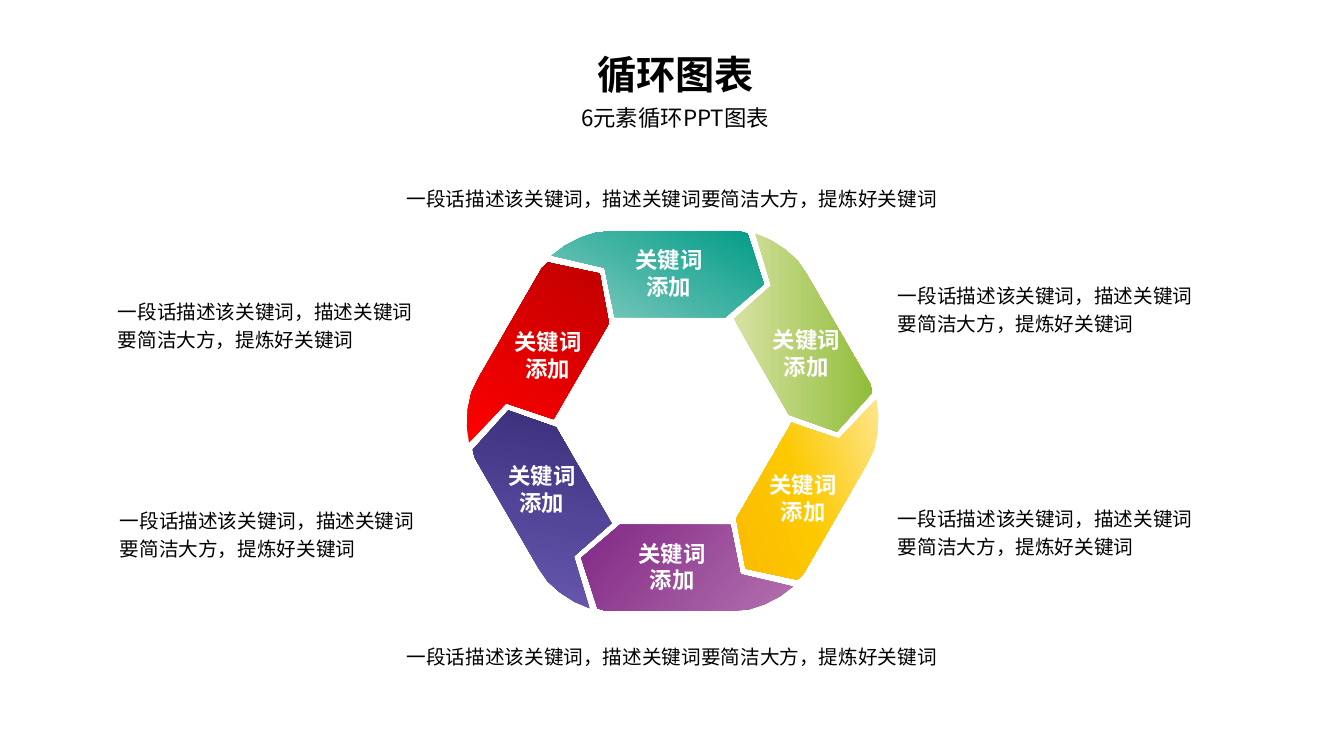
import math

import lxml.etree
import pptx
import pptx.dml.color
import pptx.enum.text
import pptx.oxml.ns
import pptx.util

Cm = pptx.util.Cm
RGB = pptx.dml.color.RGBColor
Align = pptx.enum.text.PP_ALIGN
qn = pptx.oxml.ns.qn

FONT = "Noto Sans CJK SC"
BLACK = RGB(0x00, 0x00, 0x00)
WHITE = RGB(0xFF, 0xFF, 0xFF)
TEAL = (RGB(0x86, 0xCC, 0xC1), RGB(0x3E, 0xB2, 0xA2), RGB(0x00, 0x9C, 0x87))
GREEN = (RGB(0xD7, 0xE2, 0xA3), RGB(0xB0, 0xCE, 0x69), RGB(0x90, 0xBD, 0x39))
YELLOW = (RGB(0xFD, 0xE6, 0x8D), RGB(0xFC, 0xC9, 0x00), RGB(0xFB, 0xBB, 0x01))
PURPLE = (RGB(0xB3, 0x70, 0xAE), RGB(0x82, 0x29, 0x85))
BLUE = (RGB(0x69, 0x5A, 0xB2), RGB(0x53, 0x45, 0x97), RGB(0x3A, 0x2E, 0x7A))
RED = (RGB(0xFF, 0x00, 0x00), RGB(0xC0, 0x00, 0x00))

TITLE = {"size": pptx.util.Pt(28), "bold": True}
SUBTITLE = {"size": pptx.util.Pt(16)}
KEYWORD = {"size": pptx.util.Pt(16), "bold": True}
BODY = {"size": pptx.util.Pt(14)}

DESCRIPTION = "一段话描述该关键词，描述关键词要简洁大方，提炼好关键词"

# Corners of the top arrow in cm from the ring centre
ARROW = [
    (-3.04, -4.17), (-2.71, -4.42), (-2.32, -4.62), (-1.92, -4.75),
    (-1.51, -4.78), (1.46, -4.78), (1.69, -4.78), (1.89, -4.72),
    (2.30, -3.45), (1.33, -2.62), (-1.46, -2.62), (-1.71, -3.86),
]
SEGMENTS = [
    (TEAL, (0, 54, 100), 300, (-0.09, -3.71)),
    (GREEN, (0, 54, 100), 0, (3.37, -1.70)),
    (YELLOW, (0, 54, 100), 160, (3.29, 1.96)),
    (PURPLE, (0, 100), 220, (-0.01, 3.68)),
    (BLUE, (0, 47, 100), 280, (-3.29, 1.73)),
    (RED, (0, 100), 300, (-3.14, -1.65)),
]


def add_text(page, box, lines, style, color=BLACK, align=Align.LEFT, wrap=True, spacing=1.0):
    """Place a text box with one paragraph per line."""
    frame = page.shapes.add_textbox(*(Cm(length) for length in box)).text_frame
    frame.word_wrap = wrap
    frame.auto_size = pptx.enum.text.MSO_AUTO_SIZE.SHAPE_TO_FIT_TEXT
    for index, line in enumerate(lines):
        para = frame.add_paragraph() if index else frame.paragraphs[0]
        para.alignment, para.line_spacing = align, spacing
        span = para.add_run()
        span.text = line
        span.font.color.rgb = color
        for name, value in {"name": FONT, **style}.items():
            setattr(span.font, name, value)
        properties = span.font.color and span._r.get_or_add_rPr()
        lxml.etree.SubElement(properties, qn("a:ea")).set("typeface", FONT)


def fill_gradient(shape, colors, stops, angle):
    """Fill a shape with a linear gradient, its angle measured clockwise."""
    shape.fill.gradient()
    shape.fill.gradient_angle = (360 - angle) % 360
    stop_list = shape.element.spPr.find(".//" + qn("a:gsLst"))
    for stop in list(stop_list):
        stop_list.remove(stop)
    for color, position in zip(colors, stops):
        stop = lxml.etree.SubElement(stop_list, qn("a:gs"), pos=str(position * 1000))
        lxml.etree.SubElement(stop, qn("a:srgbClr"), val=str(color))


def add_heading(page, box):
    """Place the title and the subtitle below it."""
    left, top, width, height = box
    add_text(page, (left + 0.4, top, 4.5, 1.45), ["循环图表"], TITLE, wrap=False)
    add_text(page, (left, top + 1.37, width, height - 1.37), ["6元素循环PPT图表"], SUBTITLE)


def add_ring(page, box):
    """Place six arrows turned in steps of 60 degrees, with their keywords."""
    left, top, width, height = box
    center_x, center_y = left + width / 2, top + height / 2
    for index, (colors, stops, angle, _) in enumerate(SEGMENTS):
        turn = math.radians(60 * index)
        cos, sin = math.cos(turn), math.sin(turn)
        corners = [
            (Cm(center_x + x * cos - y * sin), Cm(center_y + x * sin + y * cos))
            for x, y in ARROW
        ]
        builder = page.shapes.build_freeform(*corners[0])
        builder.add_line_segments(corners[1:], close=True)
        arrow = builder.convert_to_shape()
        arrow.shadow.inherit = False
        arrow.line.fill.background()
        fill_gradient(arrow, colors, stops, angle)
    label_width, label_height = 2.24, 1.63
    for *_, (x, y) in SEGMENTS:
        label = (center_x + x - label_width / 2, center_y + y - label_height / 2,
                 label_width, label_height)
        add_text(page, label, ["关键词", "添加"], KEYWORD, WHITE, Align.CENTER, wrap=False)


def add_descriptions(page, box):
    """Place the side descriptions and the centred ones above and below."""
    left, top, width, height = box
    side, wide = 8.33, 15.49
    right = width - side
    for x, y in [(0, 2.85), (0.05, 8.1), (right, 8.05), (right, 2.44)]:
        add_text(page, (left + x, top + y, side, 1.63), [DESCRIPTION], BODY, spacing=1.2)
    for y in (0, height - 0.91):
        add_text(page, (left + 6.47, top + y, wide, 0.91), [DESCRIPTION], BODY,
                 align=Align.CENTER, spacing=1.2)


def main():
    """Build the deck and save it."""
    deck = pptx.Presentation()
    deck.slide_width, deck.slide_height = Cm(33.87), Cm(19.05)
    page = deck.slides.add_slide(deck.slide_layouts[6])
    add_heading(page, (14.4, 1.14, 5.28, 2.31))
    add_ring(page, (11.77, 5.83, 10.36, 9.56))
    add_descriptions(page, (2.72, 4.47, 27.99, 12.44))
    deck.save("out.pptx")


if __name__ == "__main__":
    main()
